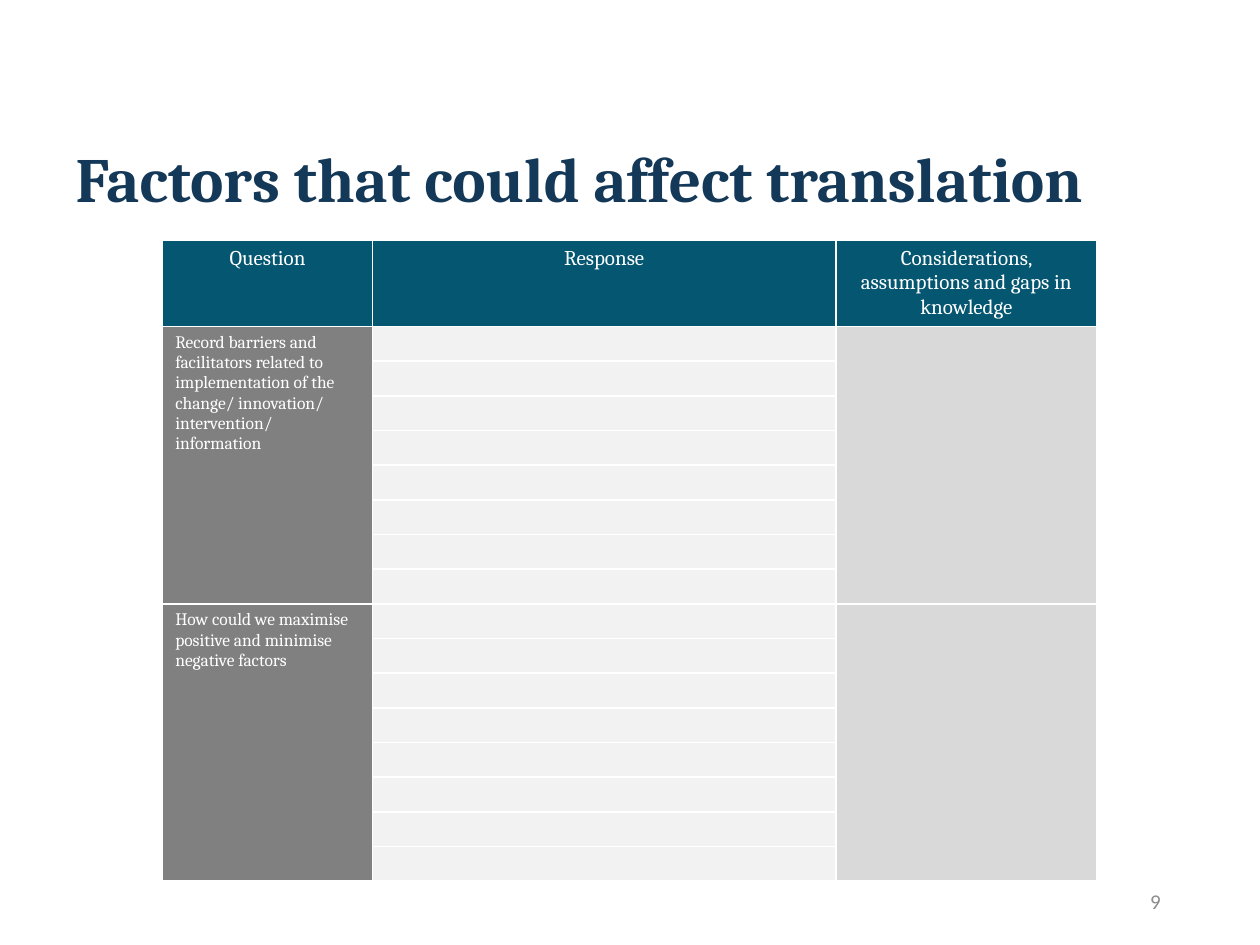
from pptx import Presentation
from pptx.dml.color import RGBColor
from pptx.enum.text import MSO_ANCHOR, PP_ALIGN
from pptx.util import Cm, Pt

LEFT, CENTER, RIGHT = PP_ALIGN.LEFT, PP_ALIGN.CENTER, PP_ALIGN.RIGHT
MIDDLE = MSO_ANCHOR.MIDDLE

NAVY = RGBColor(0x14, 0x38, 0x58)
TEAL = RGBColor(0x05, 0x56, 0x71)
WHITE = RGBColor(0xFF, 0xFF, 0xFF)
DARK = RGBColor(0x80, 0x80, 0x80)
PALE = RGBColor(0xF2, 0xF2, 0xF2)
LIGHT = RGBColor(0xD9, 0xD9, 0xD9)
GREY = RGBColor(0x8C, 0x8C, 0x8C)

HEADS = ["Question", "Response", "Considerations, assumptions and gaps in knowledge"]
ASKS = [
    "Record barriers and facilitators related to implementation of the "
    "change/ innovation/ intervention/ information",
    "How could we maximise positive and minimise negative factors",
]
WIDTHS = [4.23, 9.34, 5.26]
SPAN = 8  # answer lines per question


def write(frame, text, size, color, align=LEFT, face="Cambria", bold=False):
    frame.text = text
    para = frame.paragraphs[0]
    para.alignment = align
    font = para.font
    font.name, font.size, font.bold = face, Pt(size), bold
    font.color.rgb = color


deck = Presentation()
deck.slide_width, deck.slide_height = Cm(25.4), Cm(19.05)
slide = deck.slides.add_slide(deck.slide_layouts[5])

# Title
title = slide.shapes.title
title.left, title.top, title.width, title.height = Cm(1.27), Cm(2.34), Cm(22.86), Cm(3.18)
frame = title.text_frame
frame.vertical_anchor = MIDDLE
frame.margin_bottom = Cm(0.64)
write(frame, "Factors that could affect translation", 36, NAVY, bold=True)
frame.paragraphs[0].line_spacing = 0.9

# Table: the default style draws the white rules
count = 1 + SPAN * len(ASKS)
table = slide.shapes.add_table(
    count, len(HEADS), Cm(3.28), Cm(4.85), Cm(sum(WIDTHS)), Cm(12.95)
).table
table.horz_banding = False
for col, width in zip(table.columns, WIDTHS):
    col.width = Cm(width)
for row in table.rows:
    row.height = Cm(0.7)
table.rows[0].height = Cm(1.73)

for r in range(count):
    for c, fill in enumerate([DARK, PALE, LIGHT]):
        cell = table.cell(r, c)
        cell.fill.solid()
        cell.fill.fore_color.rgb = TEAL if r == 0 else fill
        if r == 0:
            write(cell.text_frame, HEADS[c], 12, WHITE, CENTER)
        else:
            # a small end mark keeps empty rows low
            end = cell.text_frame.paragraphs[0]._p.get_or_add_endParaRPr()
            end.set("sz", "800")

for i, ask in enumerate(ASKS):
    top = 1 + i * SPAN
    for c in (0, 2):
        table.cell(top, c).merge(table.cell(top + SPAN - 1, c))
    write(table.cell(top, 0).text_frame, ask, 10, WHITE)

# Page number
page = slide.shapes.add_textbox(Cm(17.93), Cm(17.65), Cm(5.72), Cm(1.02))
page.text_frame.word_wrap = True
page.text_frame.vertical_anchor = MIDDLE
write(page.text_frame, "9", 12, GREY, RIGHT, "Calibri")

deck.save("out.pptx")
